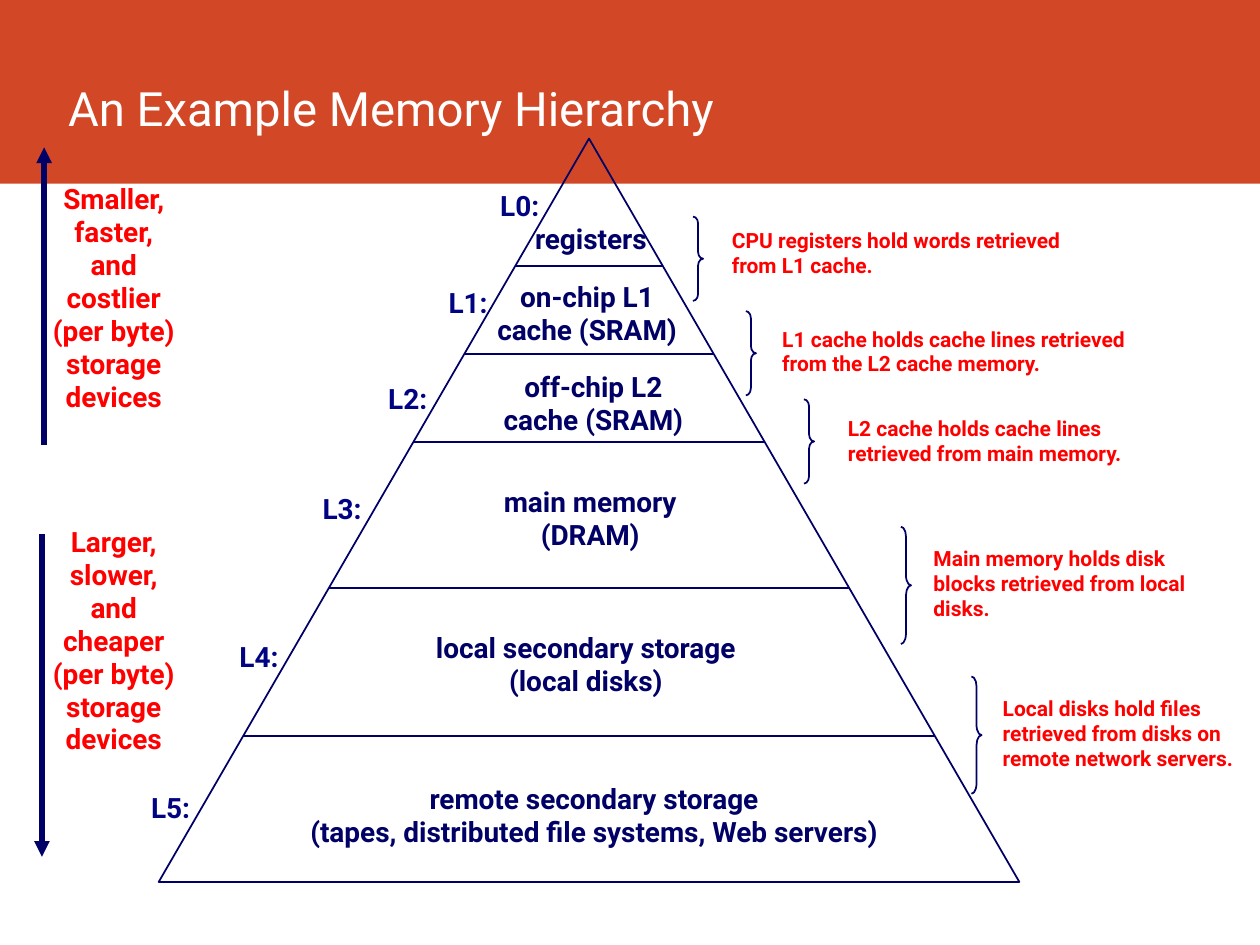
from lxml import etree
from pptx import Presentation
from pptx.dml.color import RGBColor
from pptx.enum import shapes as sh, text as tx
from pptx.oxml import ns
from pptx.util import Pt

HUES = {"band": "D24726", "title": "FFFFFF", "navy": "000066",
        "label": "000482", "red": "FF0000"}
FONT = "Roboto"

# text, centre x and y, level name, its centre x and y
LEVELS = [
    ("registers", 337.7, 136.8, "L0:", 297, 118),
    ("on-chip L1\ncache (SRAM)", 335.5, 179.3, "L1:", 267.5, 173.5),
    ("off-chip L2\ncache (SRAM)", 339.1, 231.1, "L2:", 233, 228.2),
    ("main memory\n(DRAM)", 337.3, 296.6, "L3:", 195.5, 291.5),
    ("local secondary storage\n(local disks)", 334.8, 380.2, "L4:", 148, 376),
    ("remote secondary storage\n(tapes, distributed file systems, Web servers)",
     339.5, 466.6, "L5:", 97.5, 462.2),
]
RULES = [152, 202.3, 252.7, 336.2, 420.5]

# brace left, top, height and bend; note left, centre y and width; note
NOTES = [
    (396, 123.8, 48.2, 0.67, 411.1, 145.1, 230,
     "CPU registers hold words retrieved from L1 cache."),
    (426.2, 177.8, 48.2, 0.72, 439.9, 201.2, 223,
     "L1 cache holds cache lines retrieved from the L2 cache memory."),
    (459.4, 228.2, 48.2, 0.72, 477.4, 252.4, 207,
     "L2 cache holds cache lines retrieved from main memory."),
    (514.8, 301, 67, 0.99, 526.3, 333.7, 190,
     "Main memory holds disk\nblocks retrieved from local\ndisks."),
    (555.1, 386.6, 67, 0.99, 565.9, 419.4, 154,
     "Local disks hold files retrieved from disks on remote network servers."),
]


def tint(hue):
    return RGBColor.from_string(HUES[hue])


def style(par, size, hue, bold=True):
    font = par.font
    font.name, font.size, font.bold = FONT, Pt(size), bold
    font.color.rgb = tint(hue)


def write(slide, box, words, hue, size=16, align=tx.PP_ALIGN.CENTER, wrap=False):
    item = slide.shapes.add_textbox(*map(Pt, box))
    frame = item.text_frame
    frame.word_wrap = wrap
    frame.vertical_anchor = tx.MSO_ANCHOR.MIDDLE
    frame.text = words
    for par in frame.paragraphs:
        par.alignment, par.line_spacing = align, 0.98
        style(par, size, hue)


def centre(slide, x, y, words, hue, wide=120):
    tall = 7.2 + 18.6 * len(words.split("\n"))
    write(slide, (x - wide / 2, y - tall / 2, wide, tall), words, hue)


def outline(slide, kind, box):
    item = slide.shapes.add_shape(kind, *map(Pt, box))
    item.shadow.inherit = False
    item.fill.background()
    item.line.color.rgb = tint("navy")
    item.line.width = Pt(1)
    return item


def line(slide, ends, width=1, arrow=False):
    item = slide.shapes.add_connector(sh.MSO_CONNECTOR.STRAIGHT, *map(Pt, ends))
    item.line.color.rgb = tint("navy")
    item.line.width = Pt(width)
    if arrow:
        etree.SubElement(item.line._get_or_add_ln(), ns.qn("a:tailEnd"),
                         type="triangle")
    etree.SubElement(item._element.spPr, ns.qn("a:effectLst"))


def header(slide, box):
    left, top, wide, tall = box
    band = slide.shapes.add_shape(sh.MSO_SHAPE.RECTANGLE, *map(Pt, box))
    band.shadow.inherit = False
    band.fill.solid()
    band.fill.fore_color.rgb = tint("band")
    band.line.fill.background()
    slide.shapes._spTree.insert(2, band._element)

    title = slide.shapes.title
    title.left, title.top = Pt(left + 31.7), Pt(top + 19.4)
    title.width, title.height = Pt(wide - 34), Pt(62)
    frame = title.text_frame
    frame.text = "An Example Memory Hierarchy"
    frame.auto_size = tx.MSO_AUTO_SIZE.NONE
    frame.vertical_anchor = tx.MSO_ANCHOR.BOTTOM
    frame.paragraphs[0].alignment = tx.PP_ALIGN.LEFT
    style(frame.paragraphs[0], 27, "title", False)


def pyramid(slide, box):
    """Triangle cut by rules that end on its sides, with named levels."""
    left, top, wide, tall = box
    outline(slide, sh.MSO_SHAPE.ISOSCELES_TRIANGLE, box)
    mid = left + wide / 2
    for y in RULES:
        half = wide / 2 * (y - top) / tall
        line(slide, (mid - half, y, mid + half, y))
    for words, x, y, name, namex, namey in LEVELS:
        centre(slide, x, y, words, "navy", 360)
        centre(slide, namex, namey, name, "label", 38)


def notes(slide):
    for left, top, tall, bend, x, y, wide, words in NOTES:
        brace = outline(slide, sh.MSO_SHAPE.RIGHT_BRACE, (left, top, 5.8, tall))
        brace.adjustments[0], brace.adjustments[1] = bend, 0.5
        write(slide, (x, y - 25, wide, 50), words, "red", 12,
              tx.PP_ALIGN.LEFT, True)


def trend(slide, x, start, end, y, words):
    """Thick arrow with a column of words beside it."""
    line(slide, (x, start, x, end), 3, True)
    centre(slide, 65, y, words, "red", 87)


def main():
    deck = Presentation()
    deck.slide_width, deck.slide_height = Pt(720), Pt(540)
    slide = deck.slides.add_slide(deck.slide_layouts[5])
    header(slide, (0, 0, 720, 105))
    pyramid(slide, (90.7, 79.2, 491.8, 424.8))
    notes(slide)
    trend(slide, 25.2, 254.2, 84.2, 170.6,
          "Smaller,\nfaster,\nand\ncostlier\n(per byte)\nstorage\ndevices")
    trend(slide, 24, 305.3, 489.6, 366.5,
          "Larger,\nslower,\nand\ncheaper\n(per byte)\nstorage\ndevices")
    deck.save("out.pptx")


if __name__ == "__main__":
    main()
